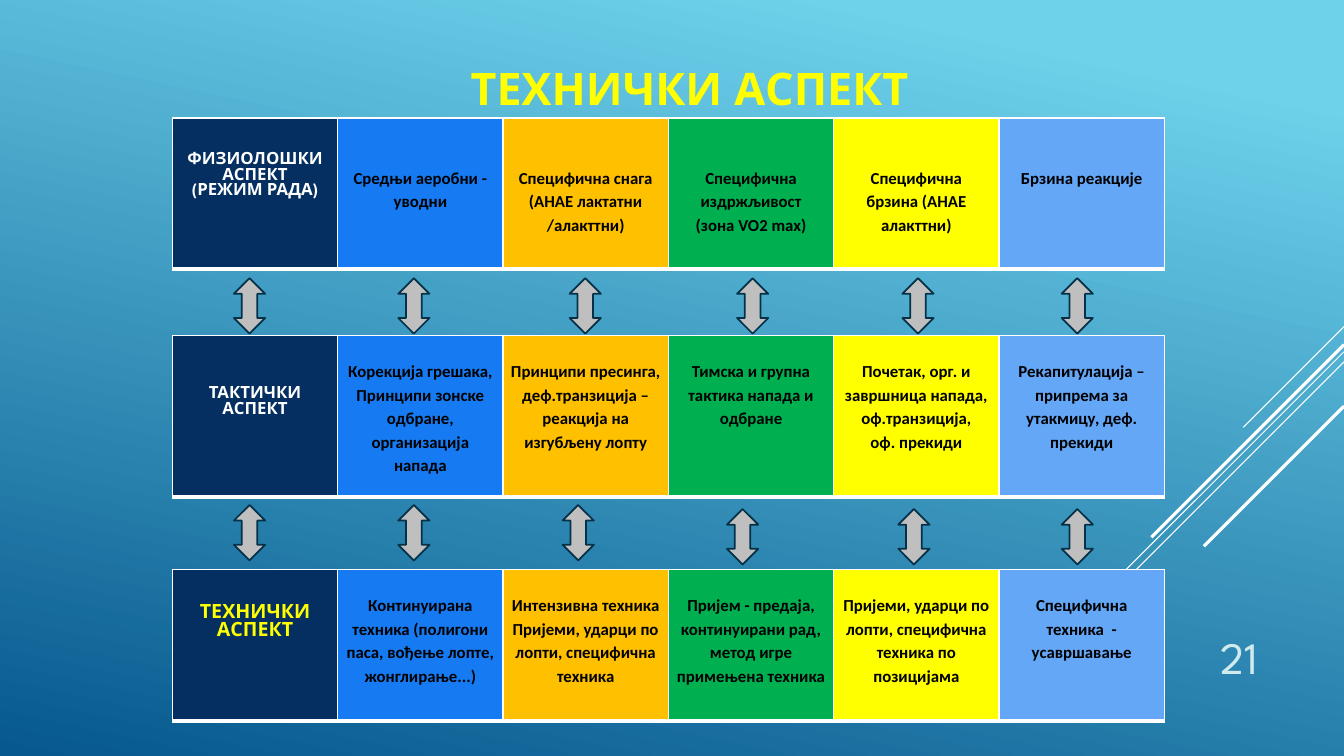
import pptx
import pptx.util
import pptx.dml.color
import pptx.enum.shapes
import pptx.enum.text
import pptx.oxml
import pptx.oxml.ns

Inches = pptx.util.Inches
Pt = pptx.util.Pt
ALIGN = pptx.enum.text.PP_ALIGN
ANCHOR = pptx.enum.text.MSO_ANCHOR
NS = pptx.oxml.ns.nsdecls("a")


def color(hex_code):
    return pptx.dml.color.RGBColor.from_string(hex_code)


def write(frame, lines, size, face, hex_code, bold, align, spacing=None):
    frame.word_wrap = True
    frame.text = "\n".join(lines)
    for paragraph in frame.paragraphs:
        paragraph.alignment = align
        paragraph.line_spacing = spacing
        paragraph.font.size = Pt(size)
        paragraph.font.name = face
        paragraph.font.bold = bold
        paragraph.font.color.rgb = color(hex_code)


deck = pptx.Presentation()
deck.slide_width = Inches(13.33)
deck.slide_height = Inches(7.5)
slide = deck.slides.add_slide(deck.slide_layouts[5])

backdrop = slide.background.fill
backdrop.gradient()
backdrop.gradient_angle = 258
for stop, (position, shade) in zip(
    backdrop.gradient_stops, [(0.1, "6ED2EB"), (1, "06588E")]
):
    stop.position = position
    stop.color.rgb = color(shade)

stripes = [
    (3.24, 1, 0.75),
    (3.49, 3.26, 0.75),
    (3.59, 2.07, 0.75),
    (3.42, 1.91, 2.25),
    (4.03, 1.39, 2.25),
]
for start, reach, weight in stripes:
    stripe = slide.shapes.add_connector(
        pptx.enum.shapes.MSO_CONNECTOR.STRAIGHT,
        deck.slide_width,
        Inches(start),
        deck.slide_width - Inches(reach),
        Inches(start + reach),
    )
    stripe.line.color.rgb = color("FFFFFF")
    stripe.line.width = Pt(weight)
    stripe._element.spPr.append(pptx.oxml.parse_xml(f"<a:effectLst {NS}/>"))

heading = slide.shapes.title
heading.left, heading.top = Inches(1.97), Inches(0.44)
heading.width, heading.height = Inches(9.74), Inches(0.62)
heading.text_frame.vertical_anchor = ANCHOR.TOP
heading.text_frame.margin_top = Inches(0.16)
heading.text_frame.margin_bottom = 0
write(heading.text_frame, ["ТЕХНИЧКИ АСПЕКТ"], 32, "League Spartan", "FFFF00", True, ALIGN.CENTER)

page_number = slide.shapes.add_textbox(Inches(11.33), Inches(6.1), Inches(1.25), Inches(0.73))
page_number.text_frame.vertical_anchor = ANCHOR.BOTTOM
write(page_number.text_frame, ["21"], 32, "League Spartan", "D1EAEE", False, ALIGN.RIGHT)

grid_left = 1.71
column = 1.64
column_fills = ["052F61", "167BF3", "FFC000", "00B050", "FFFF00", "64A7F7"]
borders = {"lnL": 1, "lnR": 1, "lnT": 1, "lnB": 3}

aspects = [
    {
        "top": 1.17, "height": 1.5, "label_drop": 0.35, "text_drop": 0.47,
        "label_size": 12, "label_color": "FFFFFF",
        "cells": [
            ["ФИЗИОЛОШКИ АСПЕКТ", "(РЕЖИМ РАДА)"],
            ["Средњи аеробни - уводни"],
            ["Специфична снага (АНАЕ лактатни /алакттни)"],
            ["Специфична издржљивост", "(зона VO2 max)"],
            ["Специфична", "брзина (АНАЕ алакттни)"],
            ["Брзина реакције"],
        ],
    },
    {
        "top": 3.33, "height": 1.6, "label_drop": 0.51, "text_drop": 0.23,
        "label_size": 12, "label_color": "FFFFFF",
        "cells": [
            ["ТАКТИЧКИ АСПЕКТ"],
            ["Корекција грешака,", "Принципи зонске одбране, организација напада"],
            ["Принципи пресинга, деф.транзиција – реакција на изгубљену лопту"],
            ["Тимска и групна тактика напада и одбране"],
            ["Почетак, орг. и завршница напада, оф.транзиција,", "оф. прекиди"],
            ["Рекапитулација – припрема за утакмицу, деф. прекиди"],
        ],
    },
    {
        "top": 5.65, "height": 1.5, "label_drop": 0.35, "text_drop": 0.23,
        "label_size": 14, "label_color": "FFFF00",
        "cells": [
            ["ТЕХНИЧКИ", "АСПЕКТ"],
            ["Континуирана техника (полигони паса, вођење лопте, жонглирање...)"],
            ["Интензивна техника Пријеми, ударци по лопти, специфична техника"],
            ["Пријем - предаја, континуирани рад, метод игре примењена техника"],
            ["Пријеми, ударци по лопти, специфична техника по позицијама"],
            ["Специфична техника  - усавршавање"],
        ],
    },
]

for aspect in aspects:
    band = slide.shapes.add_table(
        1, 6, Inches(grid_left), Inches(aspect["top"]),
        Inches(6 * column), Inches(aspect["height"]),
    ).table
    for index, lines in enumerate(aspect["cells"]):
        cell = band.cell(0, index)
        cell.fill.solid()
        cell.fill.fore_color.rgb = color(column_fills[index])
        cell.vertical_anchor = ANCHOR.TOP
        cell.margin_bottom = 0
        if index == 0:
            cell.margin_top = Inches(aspect["label_drop"])
            write(cell.text_frame, lines, aspect["label_size"], "League Spartan",
                  aspect["label_color"], True, ALIGN.CENTER)
        else:
            cell.margin_top = Inches(aspect["text_drop"])
            cell.margin_left = cell.margin_right = Inches(0.07)
            write(cell.text_frame, lines, 12, "Calibri", "000000", True, ALIGN.CENTER, 1.15)
        for place, (side, weight) in enumerate(borders.items()):
            cell._tc.get_or_add_tcPr().insert(place, pptx.oxml.parse_xml(
                f'<a:{side} {NS} w="{Pt(weight)}"><a:solidFill>'
                f'<a:srgbClr val="FFFFFF"/></a:solidFill></a:{side}>'
            ))

arrow_rows = [
    ([0.61, 0.6, 0.66, 0.68, 0.68, 0.62], [2.76] * 6),
    ([0.61, 0.6, 0.59, 0.58, 0.64, 0.62], [5.01] * 3 + [5.05] * 3),
]
for offsets, tops in arrow_rows:
    for index, (offset, top) in enumerate(zip(offsets, tops)):
        arrow = slide.shapes.add_shape(
            pptx.enum.shapes.MSO_SHAPE.UP_DOWN_ARROW,
            Inches(grid_left + index * column + offset), Inches(top),
            Inches(0.31), Inches(0.55),
        )
        arrow.shadow.inherit = False
        arrow.fill.solid()
        arrow.fill.fore_color.rgb = color("BFBFBF")
        arrow.line.color.rgb = color("043148")
        arrow.line.width = Pt(1.25)

deck.save("out.pptx")
